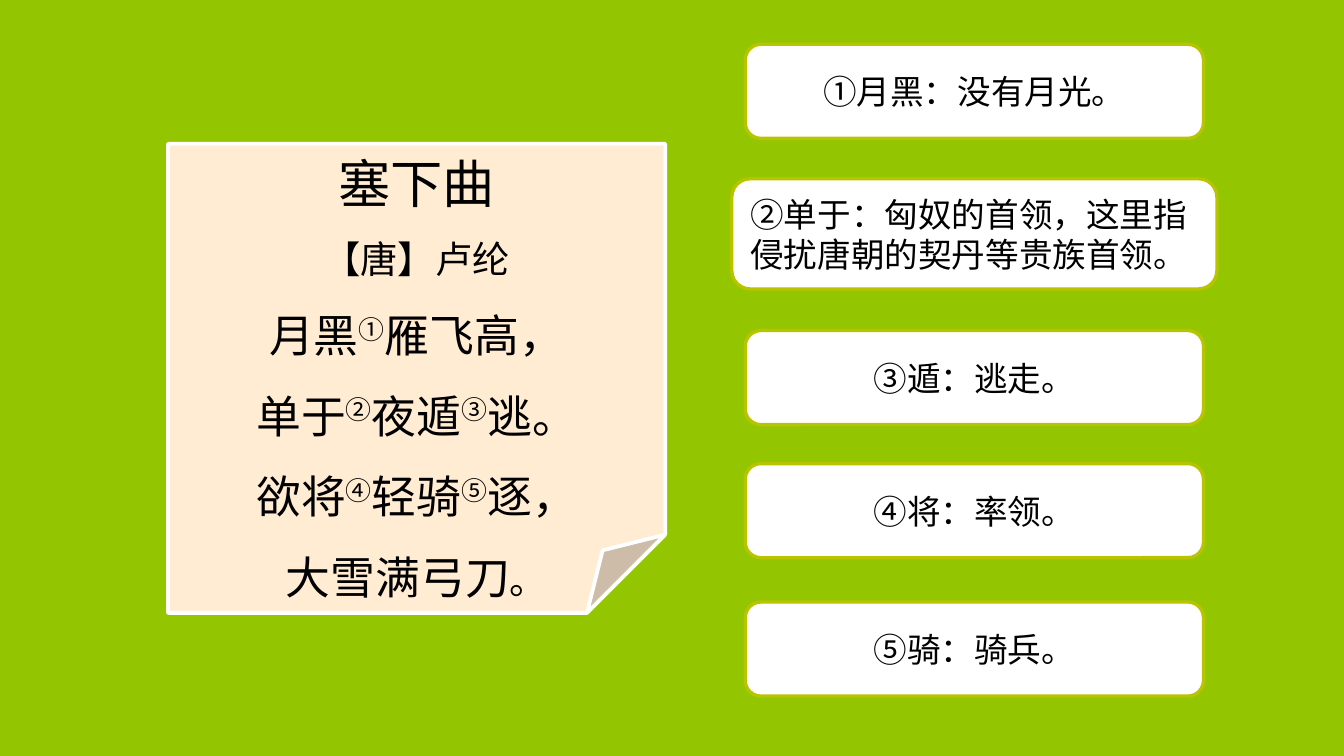
"""Build a slide with an annotated Tang poem and its five word notes."""
import pptx
import pptx.util
import pptx.dml.color
import pptx.enum.shapes
import pptx.enum.text

Inches = pptx.util.Inches
RGBColor = pptx.dml.color.RGBColor
Shapes = pptx.enum.shapes.MSO_SHAPE
Align = pptx.enum.text.PP_ALIGN

GREEN = RGBColor(0x94, 0xC6, 0x00)
CREAM = RGBColor(0xFF, 0xEC, 0xD3)
WHITE = RGBColor(0xFF, 0xFF, 0xFF)
OLIVE = RGBColor(0xB9, 0xC4, 0x01)
BLACK = RGBColor(0x00, 0x00, 0x00)

SLIDE_WIDTH = 10
SLIDE_HEIGHT = SLIDE_WIDTH * 9 / 16
POEM_FONT = "Noto Sans CJK SC"
NOTE_FONT = "Calibri"
MARKS = "①②③④⑤"

POEM = [
    [("塞下曲", 28, POEM_FONT)],
    [("【唐】卢纶", 20, POEM_FONT)],
    [(part, 24, POEM_FONT) for part in ("月黑", "①", "雁飞高，")],
    [(part, 24, POEM_FONT) for part in ("单于", "②", "夜遁", "③", "逃。")],
    [(part, 24, POEM_FONT) for part in ("欲将", "④", "轻骑", "⑤", "逐，")],
    [("大雪满弓刀", 24, POEM_FONT), ("。", 20, NOTE_FONT)],
]
POEM_BOX = (1.25, 1.07, 3.7, 3.49)
POEM_TOP_MARGIN = 0.38

NOTES = [
    ("①月黑：没有月光。", 0.33),
    ("②单于：匈奴的首领，这里指侵扰唐朝的契丹等贵族首领。", 1.33),
    ("③遁：逃走。", 2.46),
    ("④将：率领。", 3.45),
    ("⑤骑：骑兵。", 4.48),
]
NOTE_CENTER = 7.25
SHORT_NOTE = (3.41, 0.7, Align.CENTER)
LONG_NOTE = (3.61, 0.82, Align.LEFT)
LONG_NOTE_LENGTH = 12


def set_attributes(target, values):
    for name, value in values.items():
        setattr(target, name, value)


def add_card(slide, kind, box, fill, line, line_width):
    shape = slide.shapes.add_shape(kind, *map(Inches, box))
    shape.shadow.inherit = False
    shape.fill.solid()
    shape.fill.fore_color.rgb = fill
    shape.line.color.rgb = line
    shape.line.width = pptx.util.Pt(line_width)
    shape.text_frame.word_wrap = True
    shape.text_frame.vertical_anchor = pptx.enum.text.MSO_ANCHOR.MIDDLE
    return shape


def write_lines(shape, lines, paragraph_format):
    frame = shape.text_frame
    for index, line in enumerate(lines):
        paragraph = frame.add_paragraph() if index else frame.paragraphs[0]
        set_attributes(paragraph, paragraph_format)
        for text, size, font in line:
            run = paragraph.add_run()
            run.text = text
            set_attributes(run.font, {"size": pptx.util.Pt(size), "name": font})
            run.font.color.rgb = BLACK
            if text in MARKS:
                run._r.get_or_add_rPr().set("baseline", "30000")


def main():
    presentation = pptx.Presentation()
    slide_size = {"slide_width": Inches(SLIDE_WIDTH), "slide_height": Inches(SLIDE_HEIGHT)}
    set_attributes(presentation, slide_size)
    slide = presentation.slides.add_slide(presentation.slide_layouts[6])
    slide.background.fill.solid()
    slide.background.fill.fore_color.rgb = GREEN

    poem = add_card(slide, Shapes.FOLDED_CORNER, POEM_BOX, CREAM, WHITE, 2)
    poem.text_frame.margin_top = Inches(POEM_TOP_MARGIN)
    write_lines(poem, POEM, {"alignment": Align.CENTER, "line_spacing": 1.5})

    for text, top in NOTES:
        width, height, alignment = LONG_NOTE if len(text) > LONG_NOTE_LENGTH else SHORT_NOTE
        box = (NOTE_CENTER - width / 2, top, width, height)
        note = add_card(slide, Shapes.ROUNDED_RECTANGLE, box, WHITE, OLIVE, 1.75)
        write_lines(note, [[(text, 18, NOTE_FONT)]], {"alignment": alignment})

    presentation.save("out.pptx")


if __name__ == "__main__":
    main()
